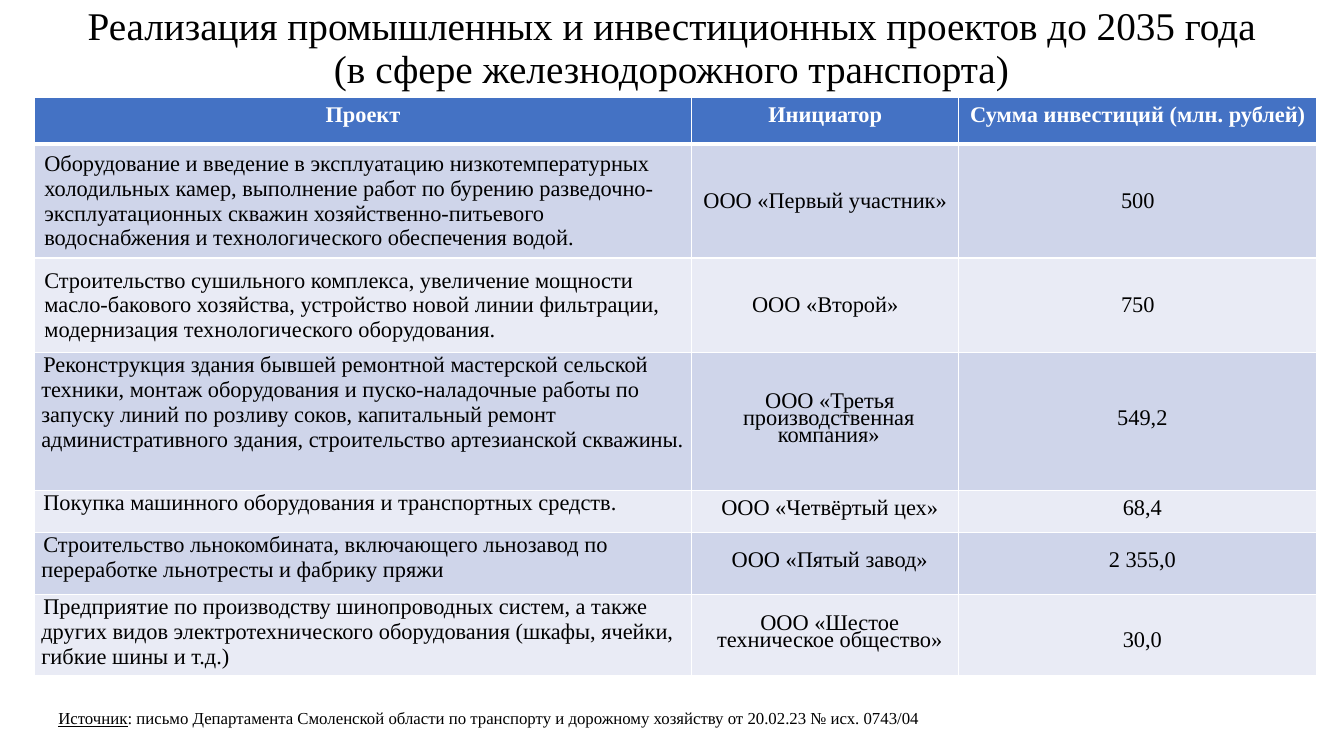
from lxml import etree
from pptx import Presentation
from pptx.dml.color import RGBColor
from pptx.enum.text import MSO_ANCHOR as Anchor, MSO_AUTO_SIZE as AutoSize, PP_ALIGN as Align
from pptx.oxml.ns import qn
from pptx.util import Inches, Pt

FONT = "Times New Roman"
BLACK = RGBColor(0x00, 0x00, 0x00)
WHITE = RGBColor(0xFF, 0xFF, 0xFF)
HEADER_BLUE = RGBColor(0x44, 0x72, 0xC4)
BAND_DARK = RGBColor(0xCF, 0xD5, 0xEA)
BAND_LIGHT = RGBColor(0xE9, 0xEB, 0xF5)

COLUMN_WIDTHS = [6.52, 2.65, 3.55]
ROW_HEIGHTS = [0.46, 1.13, 0.94, 1.37, 0.41, 0.62, 0.79]
ROWS = [
    ("Проект", "Инициатор", "Сумма инвестиций (млн. рублей)"),
    ("Оборудование и введение в эксплуатацию низкотемпературных холодильных камер, "
     "выполнение работ по бурению разведочно-эксплуатационных скважин "
     "хозяйственно-питьевого водоснабжения и технологического обеспечения водой.",
     "ООО «Первый участник»", "500"),
    ("Строительство сушильного комплекса, увеличение мощности масло-бакового хозяйства, "
     "устройство новой линии фильтрации, модернизация технологического оборудования.",
     "ООО «Второй»", "750"),
    ("Реконструкция здания бывшей ремонтной мастерской сельской техники, монтаж "
     "оборудования и пуско-наладочные работы по запуску линий по розливу соков, "
     "капитальный ремонт административного здания, строительство артезианской скважины.",
     "ООО «Третья производственная компания»", "549,2"),
    ("Покупка машинного оборудования и транспортных средств.",
     "ООО «Четвёртый цех»", "68,4"),
    ("Строительство льнокомбината, включающего льнозавод по переработке льнотресты "
     "и фабрику пряжи", "ООО «Пятый завод»", "2 355,0"),
    ("Предприятие по производству шинопроводных систем, а также других видов "
     "электротехнического оборудования (шкафы, ячейки, гибкие шины и т.д.)",
     "ООО «Шестое\nтехническое общество»", "30,0"),
]


def style_font(font, size, color, bold=False):
    font.name = FONT
    font.size = Pt(size)
    font.bold = bold
    font.color.rgb = color


def add_borders(cell, bottom_width):
    properties = cell._tc.get_or_add_tcPr()
    for side, width in (("lnL", 1), ("lnR", 1), ("lnT", 1), ("lnB", bottom_width)):
        line = etree.SubElement(properties, qn(f"a:{side}"), w=str(Pt(width)))
        fill = etree.SubElement(line, qn("a:solidFill"))
        etree.SubElement(fill, qn("a:srgbClr"), val=str(WHITE))


deck = Presentation()
deck.slide_width = Inches(13.33)
deck.slide_height = Inches(7.5)
page = deck.slides.add_slide(deck.slide_layouts[5])

title = page.shapes.title
title.left, title.top = Inches(0.46), Inches(0.18)
title.width, title.height = Inches(12.4), Inches(0.62)
title.text_frame.text = (
    "Реализация промышленных и инвестиционных проектов до 2035 года\v"
    "(в сфере железнодорожного транспорта)"
)
title.text_frame.auto_size = AutoSize.NONE
title.text_frame.vertical_anchor = Anchor.MIDDLE
heading = title.text_frame.paragraphs[0]
heading.alignment = Align.CENTER
heading.line_spacing = 0.9
style_font(heading.font, 28, BLACK)

source_box = page.shapes.add_textbox(Inches(0.48), Inches(6.97), Inches(12.78), Inches(0.3))
source_box.text_frame.word_wrap = True
source_box.text_frame.auto_size = AutoSize.SHAPE_TO_FIT_TEXT
source_para = source_box.text_frame.paragraphs[0]
label = source_para.add_run()
label.text = "Источник"
label.font.underline = True
source_para.add_run().text = (
    ": письмо Департамента Смоленской области по транспорту и дорожному хозяйству "
    "от 20.02.23 № исх. 0743/04"
)
style_font(source_para.font, 12, BLACK)

table = page.shapes.add_table(
    len(ROWS), len(COLUMN_WIDTHS), Inches(0.34), Inches(0.97),
    Inches(sum(COLUMN_WIDTHS)), Inches(sum(ROW_HEIGHTS)),
).table
for column, width in zip(table.columns, COLUMN_WIDTHS):
    column.width = Inches(width)
for row, height in zip(table.rows, ROW_HEIGHTS):
    row.height = Inches(height)

for row_index, texts in enumerate(ROWS):
    is_header = row_index == 0
    is_compact = row_index >= 3
    for column_index, text in enumerate(texts):
        is_project = column_index == 0
        cell = table.cell(row_index, column_index)
        cell.text = text
        add_borders(cell, 3 if is_header else 1)
        cell.fill.solid()
        if is_header:
            cell.fill.fore_color.rgb = HEADER_BLUE
        else:
            cell.fill.fore_color.rgb = BAND_DARK if row_index % 2 else BAND_LIGHT
            cell.margin_left = cell.margin_right = cell.margin_top = cell.margin_bottom = 0
            if not (is_project and is_compact):
                cell.vertical_anchor = Anchor.MIDDLE
        for para in cell.text_frame.paragraphs:
            para.alignment = Align.LEFT if is_project and not is_header else Align.CENTER
            if is_compact:
                indents = (0.07, 0.02)
            else:
                indents = (0.1, 0) if is_project and not is_header else (0, 0)
            for name, indent in zip(("marL", "indent"), indents):
                para._p.get_or_add_pPr().set(name, str(Inches(indent)))
            if is_compact and not is_project:
                para.line_spacing = Pt(12.4)
            style_font(para.font, 16, WHITE if is_header else BLACK, is_header)

table.cell(6, 2).margin_top = Inches(0.17)

deck.save("out.pptx")
